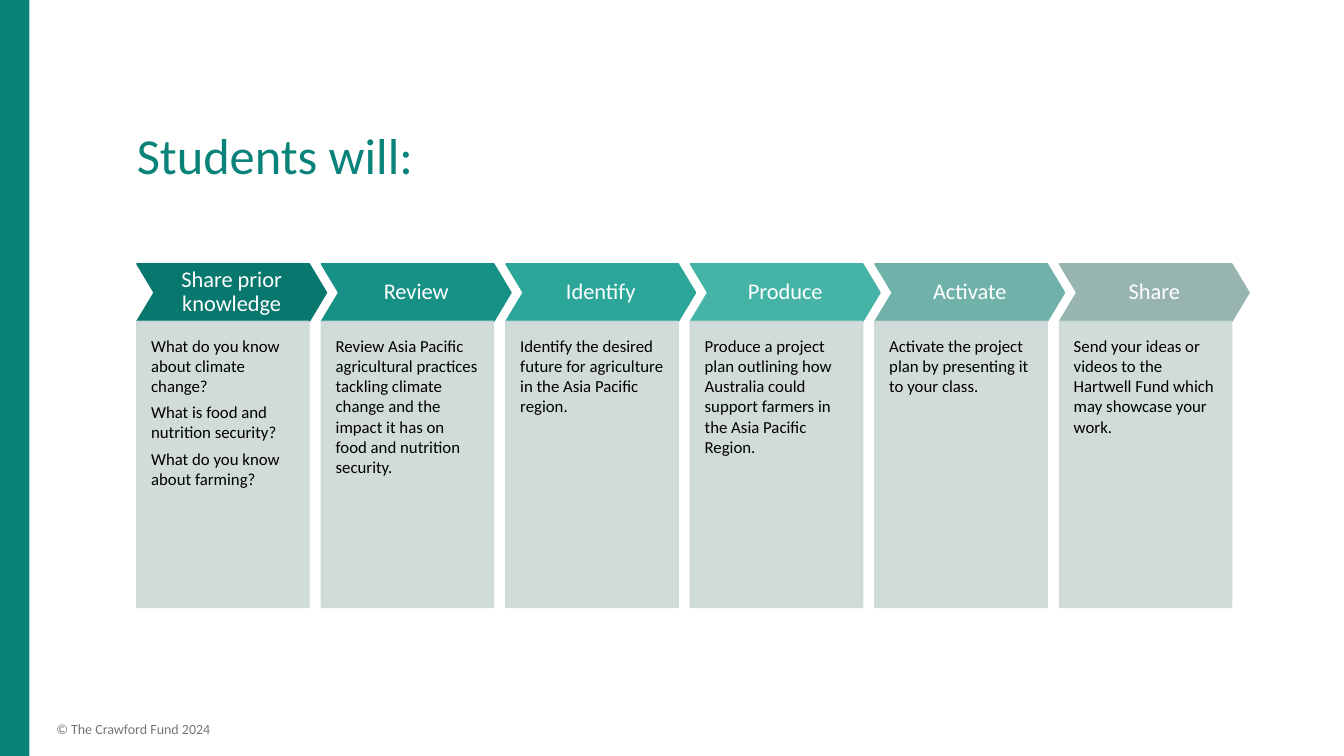
from pptx import Presentation
from pptx.dml.color import RGBColor
from pptx.enum.shapes import MSO_SHAPE
from pptx.enum.text import MSO_ANCHOR, PP_ALIGN
from pptx.oxml.ns import qn
from pptx.util import Cm, Pt
from lxml import etree

RECTANGLE, CHEVRON = MSO_SHAPE.RECTANGLE, MSO_SHAPE.CHEVRON
TOP, MIDDLE, BOTTOM = MSO_ANCHOR.TOP, MSO_ANCHOR.MIDDLE, MSO_ANCHOR.BOTTOM
LEFT, CENTER = PP_ALIGN.LEFT, PP_ALIGN.CENTER
TEAL, PANEL = "098379", "CCD9D7"

STEPS = [
    ("Share prior knowledge", "08776E",
     ["What do you know about climate change?",
      "What is food and nutrition security?",
      "What do you know about farming?"]),
    ("Review", "179186",
     ["Review Asia Pacific agricultural practices tackling climate change "
      "and the impact it has on food and nutrition security."]),
    ("Identify", "2BA699",
     ["Identify the desired future for agriculture in the Asia Pacific region."]),
    ("Produce", "45B4A7",
     ["Produce a project plan outlining how Australia could support farmers "
      "in the Asia Pacific Region."]),
    ("Activate", "70B2AA",
     ["Activate the project plan by presenting it to your class."]),
    ("Share", "98B4B0",
     ["Send your ideas or videos to the Hartwell Fund which may showcase your work."]),
]


def add_block(kind, left, top, width, height, color):
    block = page.shapes.add_shape(kind, Cm(left), Cm(top), Cm(width), Cm(height))
    block.shadow.inherit = False
    block.fill.solid()
    block.fill.fore_color.rgb = RGBColor.from_string(color)
    block.line.color.rgb = RGBColor.from_string(color)
    block.line.width = Pt(1)
    return block


def write(box, lines, size, color, anchor=TOP, align=LEFT, spacing=1.0,
          insets=(0.25, 0.13, 0.25, 0.13)):
    frame = box.text_frame
    frame.word_wrap = True
    frame.vertical_anchor = anchor
    (frame.margin_left, frame.margin_top,
     frame.margin_right, frame.margin_bottom) = [Cm(inset) for inset in insets]
    frame.text = "\n".join(lines)
    for para in frame.paragraphs:
        para.alignment = align
        para.line_spacing = spacing
        para.space_after = Pt(4.2)
        para.font.name = "Calibri"
        para.font.size = Pt(size)
        para.font.color.rgb = RGBColor.from_string(color)


deck = Presentation()
deck.slide_width, deck.slide_height = Cm(33.87), Cm(19.05)
page = deck.slides.add_slide(deck.slide_layouts[6])

# Side bar
side_bar = add_block(RECTANGLE, 0, 0, 0.74, 19.05, TEAL)
side_bar.line.fill.background()

# Copyright line
footer = page.shapes.add_textbox(Cm(1.17), Cm(18.03), Cm(17.4), Cm(0.69))
write(footer, ["© The Crawford Fund 2024"], 10, "767676")

# Title
title = page.shapes.add_textbox(Cm(3.2), Cm(3.07), Cm(23.75), Cm(1.73))
write(title, ["Students will:"], 36, TEAL, anchor=BOTTOM, spacing=0.9)
title.text_frame.paragraphs[0].space_after = Pt(0)

# Steps: a chevron heading above a translucent panel
for index, (heading, color, lines) in enumerate(STEPS):
    left = 3.45 + index * 4.65
    chevron = add_block(CHEVRON, left, 6.65, 4.78, 1.45, color)
    chevron.adjustments[0] = 0.3
    write(chevron, [heading], 16, "FFFFFF", MIDDLE, CENTER, 0.9, (0.18,) * 4)

    panel = add_block(RECTANGLE, left, 8.1, 4.34, 7.21, PANEL)
    for tint in panel.fill.fore_color, panel.line.color:
        tint.rgb = RGBColor.from_string(PANEL)
    for tint in panel.element.spPr.iter(qn("a:srgbClr")):
        etree.SubElement(tint, qn("a:alpha"), val="90000")
    write(panel, lines, 12, "000000", insets=(0.36, 0.36, 0.36, 0.69))

deck.save("out.pptx")
